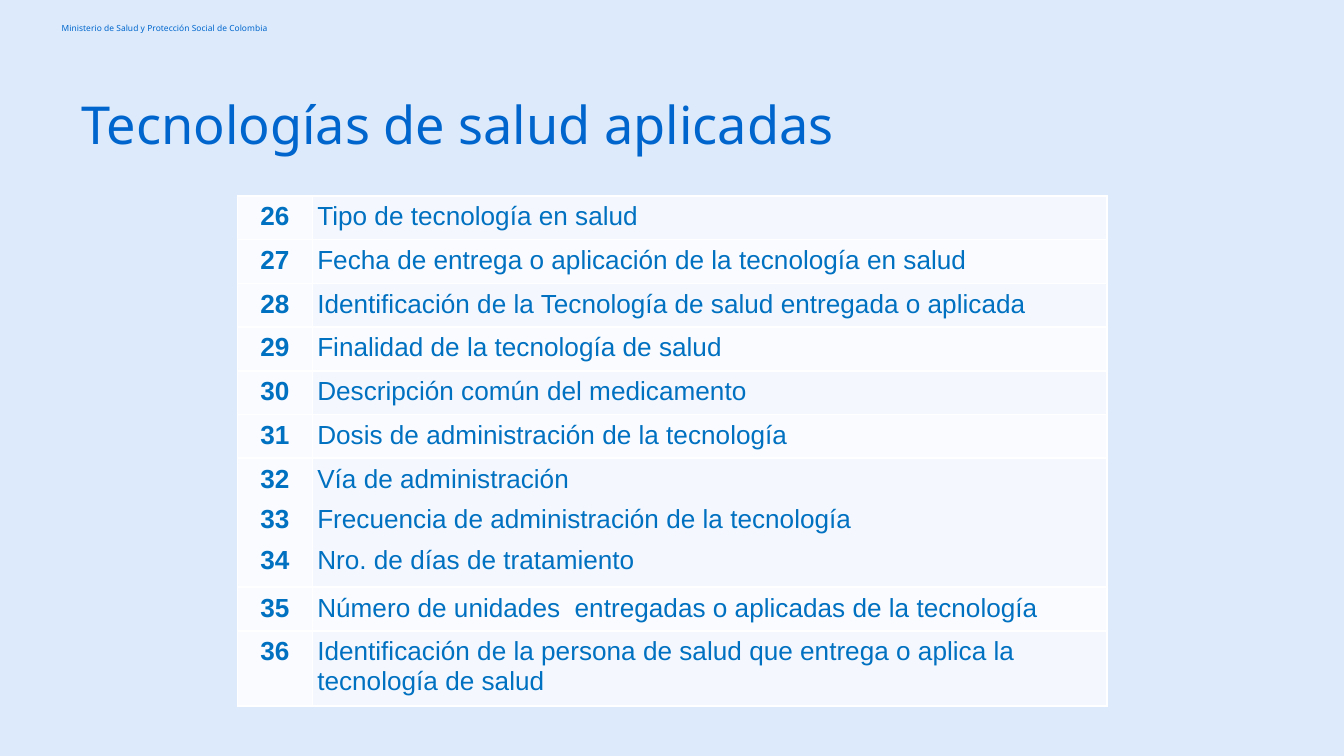
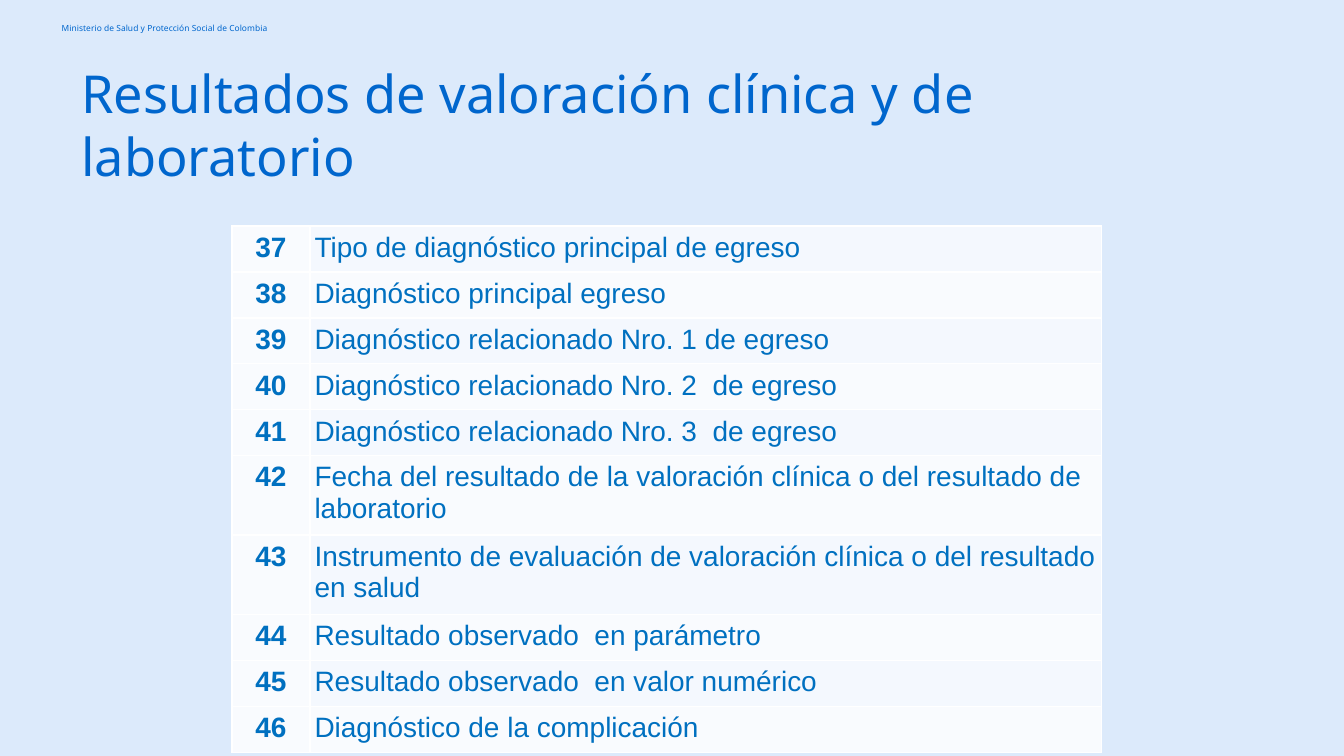
from lxml.etree import SubElement
from pptx import Presentation
from pptx.dml.color import RGBColor
from pptx.enum.text import MSO_ANCHOR, PP_ALIGN
from pptx.oxml.ns import qn
from pptx.util import Pt

# Content: each row is (number of text lines, paragraphs)
HEADER = "Ministerio de Salud y Protección Social de Colombia"
SLIDES = [
    {
        "title": "Tecnologías de salud aplicadas",
        "first_number": 26, "size": 14, "line_height": 16.1,
        "left": 127.2, "top": 105, "cols": (40.3, 425.5),
        "rows": [
            (1, ["Tipo de tecnología en salud"]),
            (1, ["Fecha de entrega o aplicación de la tecnología en salud"]),
            (1, ["Identificación de la Tecnología de salud entregada o aplicada"]),
            (1, ["Finalidad de la tecnología de salud"]),
            (1, ["Descripción común del medicamento"]),
            (1, ["Dosis de administración de la tecnología"]),
            (3, ["Vía de administración",
                 "Frecuencia de administración de la tecnología",
                 "Nro. de días de tratamiento"]),
            (1, ["Número de unidades  entregadas o aplicadas de la tecnología"]),
            (2, ["Identificación de la persona de salud que entrega o aplica "
                 "la tecnología de salud"]),
        ],
    },
    {
        "title": "Resultados de valoración clínica y de laboratorio",
        "first_number": 37, "size": 15, "line_height": 17.1,
        "left": 124.2, "top": 121, "cols": (41.8, 424.2),
        "rows": [
            (1, ["Tipo de diagnóstico principal de egreso"]),
            (1, ["Diagnóstico principal egreso"]),
            (1, ["Diagnóstico relacionado Nro. 1 de egreso"]),
            (1, ["Diagnóstico relacionado Nro. 2  de egreso"]),
            (1, ["Diagnóstico relacionado Nro. 3  de egreso"]),
            (2, ["Fecha del resultado de la valoración clínica o del "
                 "resultado de laboratorio"]),
            (2, ["Instrumento de evaluación de valoración clínica o del "
                 "resultado en salud"]),
            (1, ["Resultado observado  en parámetro"]),
            (1, ["Resultado observado  en valor numérico"]),
            (1, ["Diagnóstico de la complicación"]),
        ],
    },
]

# Shared style
BACKGROUND, TITLE_BLUE, TABLE_BLUE = "DCEAFB", "0066CD", "0070C0"
PALE, TINTED, BORDER = "F9FBFE", "F4F8FE", "FFFFFF"
HEADING_FONT, TABLE_FONT = "Noto Sans", "Arial"
BORDER_WIDTH = 0.96
PARAGRAPH_GAP = 6
ROW_PADDING = 7
CELL_INSET_X, CELL_INSET_Y = 2.5, 3.3


def color(value):
    return RGBColor.from_string(value)


def add_run(p, text, size, font, fill, bold=False):
    r = p.add_run()
    r.text = text
    r.font.size = Pt(size)
    r.font.name = font
    r.font.bold = bold
    r.font.color.rgb = color(fill)


def add_heading(s, text, box, size, inset_x, inset_y):
    tf = s.shapes.add_textbox(*(Pt(v) for v in box)).text_frame
    tf.word_wrap = True
    tf.vertical_anchor = MSO_ANCHOR.MIDDLE
    tf.margin_left = tf.margin_right = Pt(inset_x)
    tf.margin_top = tf.margin_bottom = Pt(inset_y)
    add_run(tf.paragraphs[0], text, size, HEADING_FONT, TITLE_BLUE)


def set_borders(cell):
    props = cell._tc.get_or_add_tcPr()
    for side in ("lnL", "lnR", "lnT", "lnB"):
        line = SubElement(props, qn(f"a:{side}"), w=str(int(Pt(BORDER_WIDTH))))
        SubElement(SubElement(line, qn("a:solidFill")), qn("a:srgbClr"), val=BORDER)


def fill_cell(cell, texts, size, fill, bold=False, align=PP_ALIGN.LEFT):
    set_borders(cell)
    cell.fill.solid()
    cell.fill.fore_color.rgb = color(fill)
    cell.margin_left = cell.margin_right = Pt(CELL_INSET_X)
    cell.margin_top = cell.margin_bottom = Pt(CELL_INSET_Y)
    tf = cell.text_frame
    for i, text in enumerate(texts):
        p = tf.add_paragraph() if i else tf.paragraphs[0]
        p.alignment = align
        p.space_before = Pt(PARAGRAPH_GAP)
        add_run(p, text, size, TABLE_FONT, TABLE_BLUE, bold)


def add_field_table(s, data):
    rows, cols, size = data["rows"], data["cols"], data["size"]
    # Row height follows the text, so no row has to grow when drawn
    heights = [ROW_PADDING + data["line_height"] * lines + PARAGRAPH_GAP * (len(texts) - 1)
               for lines, texts in rows]
    table = s.shapes.add_table(len(rows), len(cols), Pt(data["left"]), Pt(data["top"]),
                               Pt(sum(cols)), Pt(sum(heights))).table
    table.first_row = table.horz_banding = False
    for column, width in zip(table.columns, cols):
        column.width = Pt(width)
    number = data["first_number"]
    for i, (_, texts) in enumerate(rows):
        table.rows[i].height = Pt(heights[i])
        numbers = [str(number + k) for k in range(len(texts))]
        number += len(texts)
        fill_cell(table.cell(i, 0), numbers, size, PALE, True, PP_ALIGN.CENTER)
        fill_cell(table.cell(i, 1), texts, size, PALE if i % 2 else TINTED)


def main():
    prs = Presentation()
    prs.slide_width, prs.slide_height = Pt(720), Pt(405)
    background = prs.slide_master.background.fill
    background.solid()
    background.fore_color.rgb = color(BACKGROUND)

    for data in SLIDES:
        s = prs.slides.add_slide(prs.slide_layouts[6])
        add_heading(s, HEADER, (28.8, 7.9, 168.5, 14.4), 4.5, 4.3, 2.2)
        add_field_table(s, data)
        add_heading(s, data["title"], (38.2, 31, 506.2, 70.6), 28, 5.4, 2.9)

    prs.save("out.pptx")


if __name__ == "__main__":
    main()
